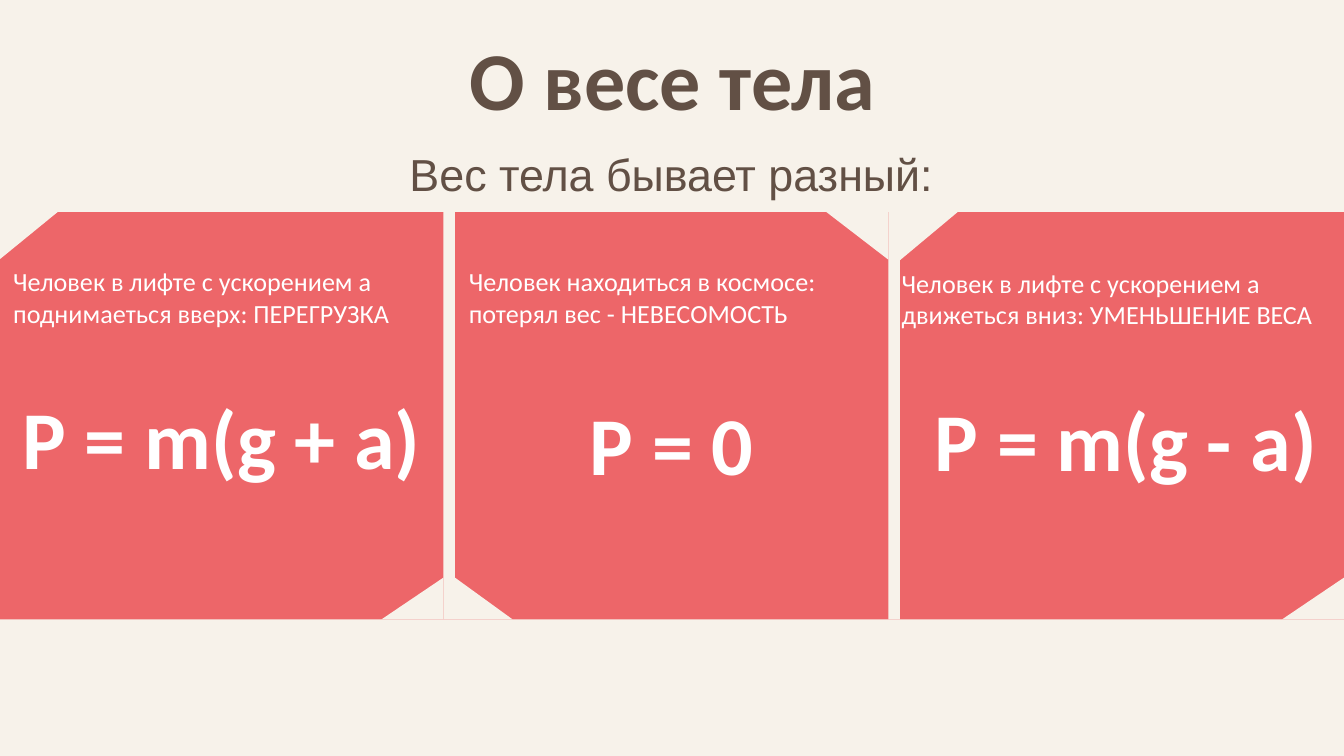
from pptx import Presentation
from pptx.dml.color import RGBColor
from pptx.enum import shapes, text
from pptx.util import Cm, Pt

# Content
TITLE = "О весе тела"
SUBTITLE = "Вес тела бывает разный:"
# caption (left, top, width), formula (left, top, width), cut corners {(side, edge): (width, height)}
PANELS = [
    dict(caption="Человек в лифте с ускорением a поднимаеться вверх: ПЕРЕГРУЗКА",
         caption_at=(0, 4.9, 8.61),
         formula="P = m(g + a)", formula_at=(0.18, 7.19, 8.1),
         corners={("left", "top"): (1.09, 0.89), ("right", "bottom"): (1.17, 0.79)}),
    dict(caption="Человек находиться в космосе: потерял вес - НЕВЕСОМОСТЬ",
         caption_at=(8.61, 4.9, 8.2),
         formula="P = 0", formula_at=(10.9, 7.32, 3.63),
         corners={("right", "top"): (1.17, 0.9), ("left", "bottom"): (1.09, 0.79)}),
    dict(caption="Человек в лифте с ускорением a движеться вниз: УМЕНЬШЕНИЕ ВЕСА",
         caption_at=(16.79, 4.93, 8.61),
         formula="P = m(g - a)", formula_at=(17.42, 7.24, 7.75),
         corners={("left", "top"): (1.09, 0.91), ("right", "bottom"): (1.17, 0.79)}),
]

# Theme and geometry, in cm
THEME = dict(paper=RGBColor(0xF7, 0xF2, 0xEA), coral=RGBColor(0xED, 0x66, 0x69),
             brown=RGBColor(0x62, 0x50, 0x45), white=RGBColor(0xFF, 0xFF, 0xFF),
             font="Calibri", subtitle_font="Arial", large=44, medium=24, small=14)
WIDTH, HEIGHT = 25.4, 14.29
BAND_TOP, BAND_HEIGHT = 4.01, 7.7
DIVIDERS, GAP = (8.38, 16.79), 0.22
LARGE_HEIGHT, CAPTION_HEIGHT = 2.13, 1.45

deck = Presentation()
deck.slide_width, deck.slide_height = Cm(WIDTH), Cm(HEIGHT)
slide = deck.slides.add_slide(deck.slide_layouts[5])
slide.background.fill.solid()
slide.background.fill.fore_color.rgb = THEME["paper"]


def write(words, box, holder=None, size=THEME["large"], color=THEME["white"],
          font=THEME["font"], bold=False, wrap=True, align=text.PP_ALIGN.LEFT):
    box = [Cm(length) for length in box]
    if holder is None:
        holder = slide.shapes.add_textbox(*box)
    holder.left, holder.top, holder.width, holder.height = box
    frame = holder.text_frame
    frame.text = words
    frame.word_wrap = wrap
    frame.auto_size = text.MSO_AUTO_SIZE.NONE
    frame.vertical_anchor = text.MSO_ANCHOR.TOP
    line = frame.paragraphs[0]
    line.alignment = align
    run = line.runs[0].font
    run.name, run.size, run.bold = font, Pt(size), bold
    run.color.rgb = color


def paint(kind, box, color, flip_h=False, flip_v=False):
    piece = slide.shapes.add_shape(kind, *[Cm(length) for length in box])
    piece.shadow.inherit = False
    piece.fill.solid()
    piece.fill.fore_color.rgb = color
    piece.line.fill.background()
    xfrm = piece._element.spPr.get_or_add_xfrm()
    for name, flipped in (("flipH", flip_h), ("flipV", flip_v)):
        if flipped:
            xfrm.set(name, "1")


# Heading
write(TITLE, (8.61, 0.41, 8.2, LARGE_HEIGHT), holder=slide.shapes.title,
      color=THEME["brown"], bold=True, align=text.PP_ALIGN.CENTER)
write(SUBTITLE, (7.49, 2.64, 10.39, 1.27), size=THEME["medium"], color=THEME["brown"],
      font=THEME["subtitle_font"], wrap=False, align=text.PP_ALIGN.CENTER)

# Band split into three panels
RECTANGLE = shapes.MSO_SHAPE.RECTANGLE
paint(RECTANGLE, (0, BAND_TOP, WIDTH, BAND_HEIGHT), THEME["coral"])
for divider in DIVIDERS:
    paint(RECTANGLE, (divider, BAND_TOP, GAP, BAND_HEIGHT), THEME["paper"])

# Cut corners, captions and formulas
starts = [0] + [divider + GAP for divider in DIVIDERS]
ends = [*DIVIDERS, WIDTH]
for panel, start, end in zip(PANELS, starts, ends):
    for (side, edge), (width, height) in panel["corners"].items():
        left = start if side == "left" else end - width
        top = BAND_TOP if edge == "top" else BAND_TOP + BAND_HEIGHT - height
        paint(shapes.MSO_SHAPE.RIGHT_TRIANGLE, (left, top, width, height), THEME["paper"],
              flip_h=side == "right", flip_v=edge == "top")
    write(panel["caption"], (*panel["caption_at"], CAPTION_HEIGHT), size=THEME["small"])
    write(panel["formula"], (*panel["formula_at"], LARGE_HEIGHT), bold=True, wrap=False)

deck.save("out.pptx")
